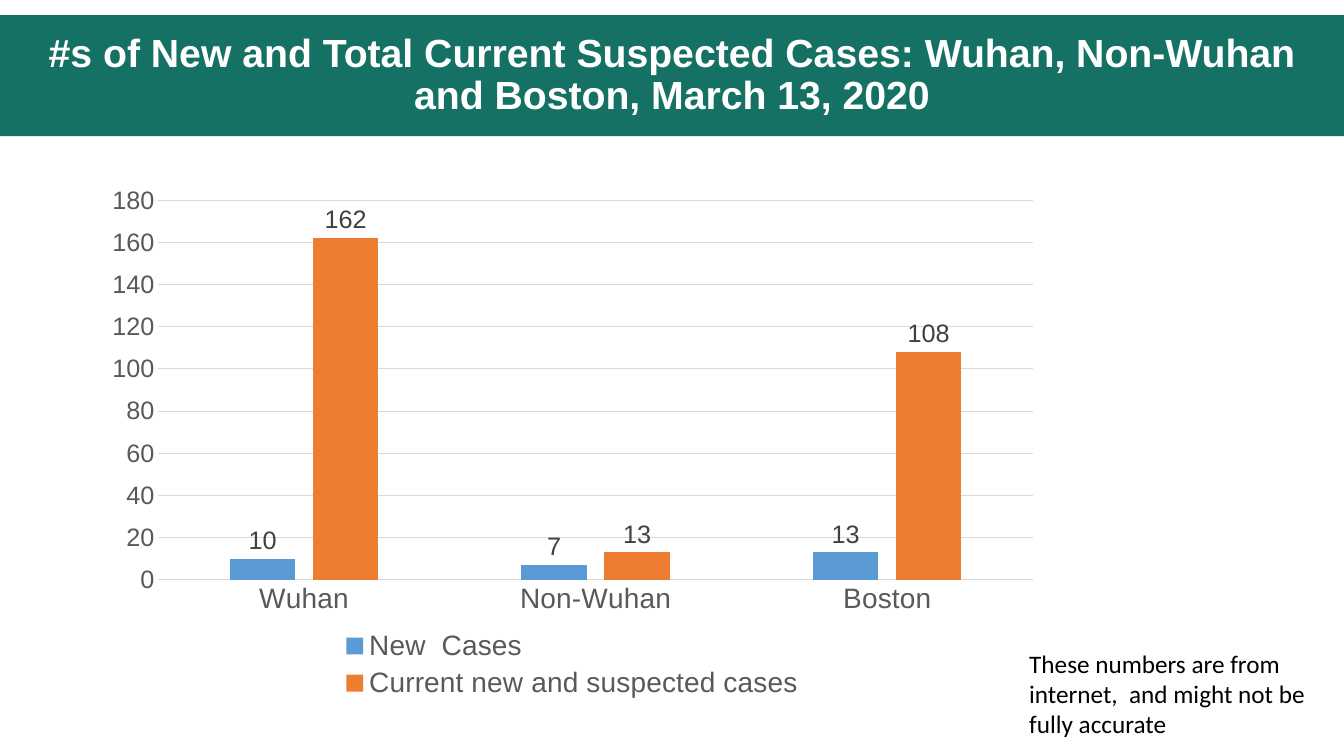
from lxml import etree
from pptx import Presentation
from pptx.chart.data import CategoryChartData
from pptx.dml.color import RGBColor
from pptx.enum.chart import XL_CHART_TYPE, XL_LABEL_POSITION, XL_LEGEND_POSITION, XL_TICK_MARK
from pptx.enum.shapes import MSO_SHAPE
from pptx.enum.text import MSO_ANCHOR, PP_ALIGN
from pptx.oxml.ns import qn
from pptx.util import Inches, Pt

COLUMNS = XL_CHART_TYPE.COLUMN_CLUSTERED
OUTSIDE_END = XL_LABEL_POSITION.OUTSIDE_END
BOTTOM = XL_LEGEND_POSITION.BOTTOM
NO_TICK = XL_TICK_MARK.NONE
RECTANGLE = MSO_SHAPE.RECTANGLE
MIDDLE, TOP = MSO_ANCHOR.MIDDLE, MSO_ANCHOR.TOP
CENTER, LEFT = PP_ALIGN.CENTER, PP_ALIGN.LEFT

WIDTH, HEIGHT = 13.33, 7.5
TITLE = "#s of New and Total Current Suspected Cases: Wuhan, Non-Wuhan and Boston, March 13, 2020"
NOTE = "These numbers are from internet,  and might not be fully accurate"
TITLE_AREA = (0, 0.15, WIDTH, 1.2)
CHART_AREA = (1.01, 1.61, 9.33, 5.38)
NOTE_AREA = (10.11, 6.38, 2.94, 1.01)
PLOT_AREA = {"x": 0.06, "y": 0.07, "w": 0.93, "h": 0.7}
CITIES = ["Wuhan", "Non-Wuhan", "Boston"]
SERIES = [
    ("New  Cases", [10, 7, 13], "5B9BD5"),
    ("Current new and suspected cases", [162, 13, 108], "ED7D31"),
]
GREEN, WHITE, BLACK = "157163", "FFFFFF", "000000"
GRAY, DARK_GRAY, LIGHT_GRAY = "595959", "404040", "D9D9D9"


def color(code):
    return RGBColor.from_string(code)


def style_font(font, size, code, name="Arial", bold=False):
    font.size, font.name, font.bold = Pt(size), name, bold
    font.color.rgb = color(code)


def write(shape, text, align=LEFT, anchor=TOP, spacing=1.0, **style):
    frame = shape.text_frame
    frame.word_wrap = True
    frame.vertical_anchor = anchor
    para = frame.paragraphs[0]
    para.alignment, para.line_spacing = align, spacing
    span = para.add_run()
    span.text = text
    style_font(span.font, **style)


def style_line(line):
    line.color.rgb = color(LIGHT_GRAY)
    line.width = Pt(0.75)


def place_plot(chart, area):
    plot_area = chart.plots[0]._element.getparent()
    for old in plot_area.findall(qn("c:layout")):
        plot_area.remove(old)
    layout = etree.Element(qn("c:layout"))
    manual = etree.SubElement(layout, qn("c:manualLayout"))
    settings = [("layoutTarget", "inner"), ("xMode", "edge"), ("yMode", "edge"), *area.items()]
    for tag, value in settings:
        etree.SubElement(manual, qn(f"c:{tag}"), val=str(value))
    plot_area.insert(0, layout)


def add_cases_chart(page):
    data = CategoryChartData()
    data.categories = CITIES
    for name, values, _ in SERIES:
        data.add_series(name, values)
    chart = page.shapes.add_chart(COLUMNS, *map(Inches, CHART_AREA), data).chart
    chart.has_title = False
    style_font(chart.font, 10, BLACK, "Calibri")
    chart.has_legend = True
    chart.legend.position = BOTTOM
    chart.legend.include_in_layout = False
    style_font(chart.legend.font, 20, GRAY)

    for axis, size in ((chart.category_axis, 20), (chart.value_axis, 18)):
        axis.major_tick_mark = axis.minor_tick_mark = NO_TICK
        style_font(axis.tick_labels.font, size, GRAY)
    style_line(chart.category_axis.format.line)
    scale = chart.value_axis
    scale.minimum_scale, scale.maximum_scale, scale.major_unit = 0, 180, 20
    scale.format.line.fill.background()
    style_line(scale.major_gridlines.format.line)

    plot = chart.plots[0]
    plot.gap_width, plot.overlap, plot.vary_by_categories = 219, -27, False
    for series, (_, _, code) in zip(plot.series, SERIES):
        series.format.fill.solid()
        series.format.fill.fore_color.rgb = color(code)
        labels = series.data_labels
        labels.show_value = True
        labels.position = OUTSIDE_END
        style_font(labels.font, 18, DARK_GRAY)
    place_plot(chart, PLOT_AREA)


def main():
    deck = Presentation()
    deck.slide_width, deck.slide_height = Inches(WIDTH), Inches(HEIGHT)
    page = deck.slides.add_slide(deck.slide_layouts[6])

    banner = page.shapes.add_shape(RECTANGLE, *map(Inches, TITLE_AREA))
    banner.shadow.inherit = False
    banner.fill.solid()
    banner.fill.fore_color.rgb = color(GREEN)
    banner.line.fill.background()
    write(banner, TITLE, align=CENTER, anchor=MIDDLE, spacing=0.9, size=28, code=WHITE, bold=True)

    add_cases_chart(page)

    box = page.shapes.add_textbox(*map(Inches, NOTE_AREA))
    write(box, NOTE, size=18, code=BLACK, name="Calibri")
    deck.save("out.pptx")


if __name__ == "__main__":
    main()
